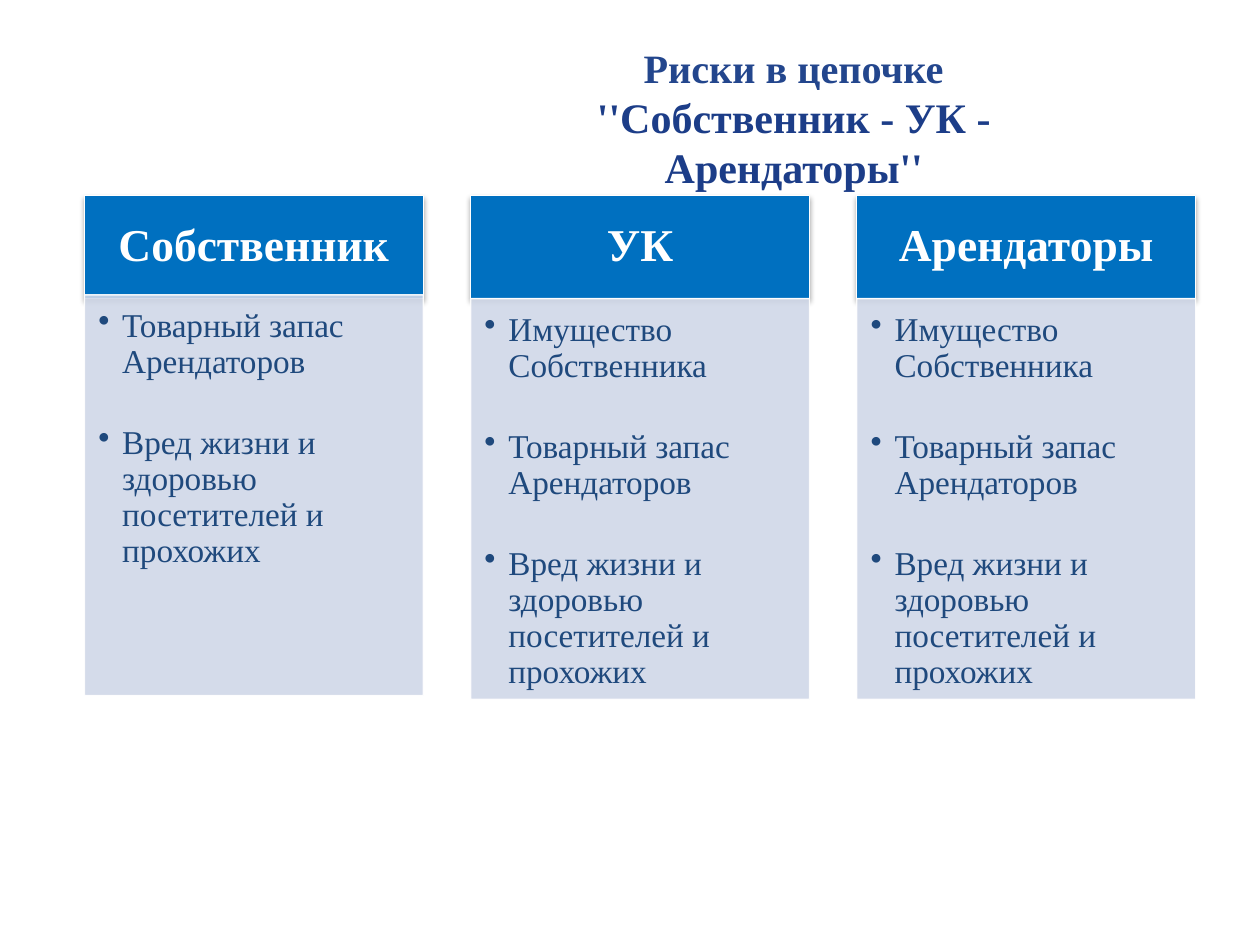
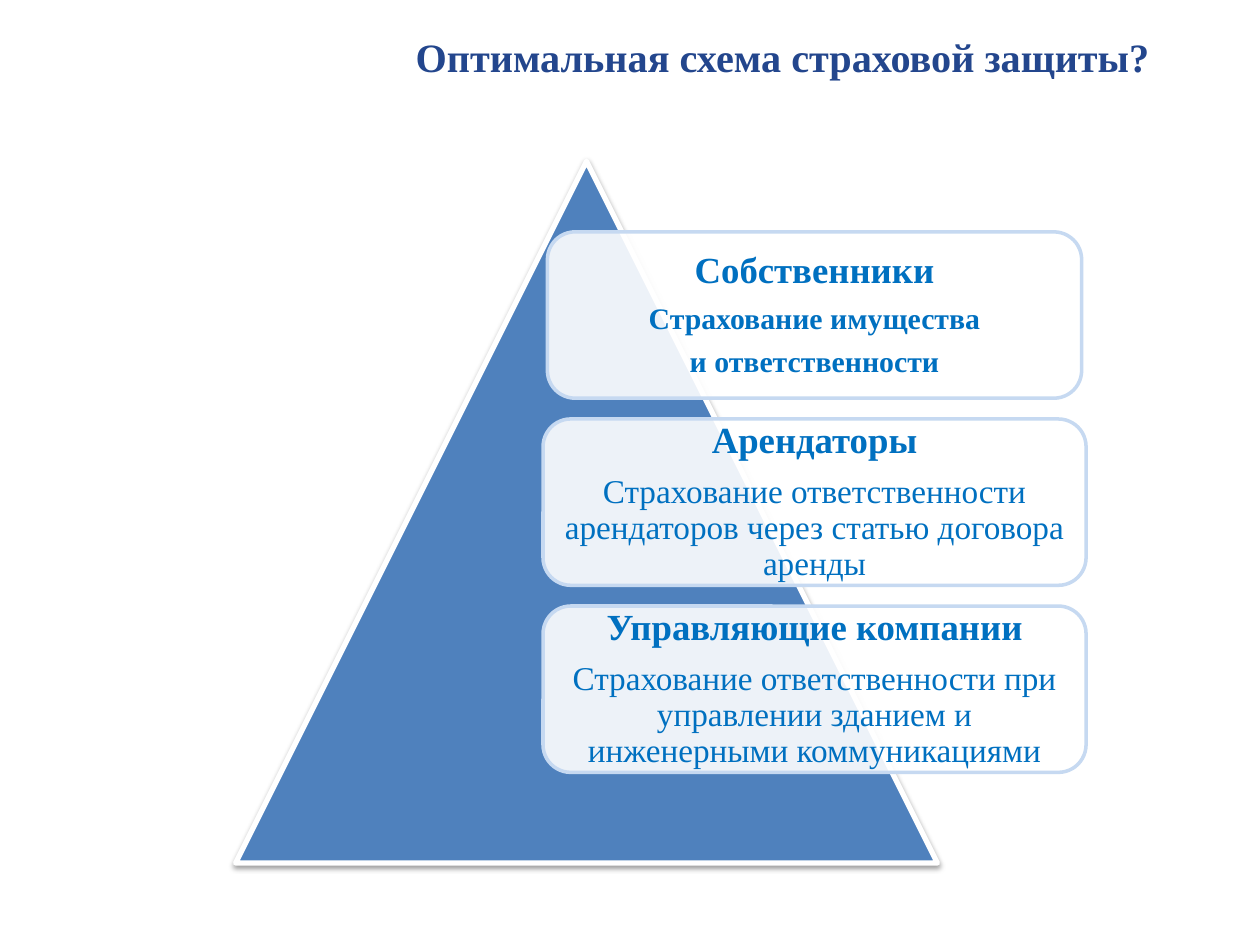
from lxml import etree
from pptx import Presentation
from pptx.dml.color import RGBColor
from pptx.enum.shapes import MSO_SHAPE
from pptx.enum.text import MSO_ANCHOR, MSO_AUTO_SIZE, PP_ALIGN
from pptx.oxml.ns import qn
from pptx.util import Inches, Pt

# Content
OWN = "Имущество Собственника"
STOCK = "Товарный запас Арендаторов"
HARM = "Вред жизни и здоровью посетителей и прохожих"

CHAIN = [("Риски в цепочке", 23, "title"),
         ("''Собственник - УК - Арендаторы''", 24, "deep")]
RISKS = [  # heading, bullets, top of the panel
    ("Собственник", [STOCK, HARM], 2.34),
    ("УК", [OWN, STOCK, HARM], 2.37),
    ("Арендаторы", [OWN, STOCK, HARM], 2.37),
]
SCHEME = [("Оптимальная схема страховой защиты?", 23, "title")]
COVER = [  # heading, lines, size, bold, box width, inset
    ("Собственники", ["Страхование имущества", "и ответственности"],
     17, True, 4.24, 0.07),
    ("Арендаторы",
     ["Страхование ответственности арендаторов через статью договора аренды"],
     19, False, 4.31, 0.09),
    ("Управляющие компании",
     ["Страхование ответственности при управлении зданием и "
      "инженерными коммуникациями"], 19, False, 4.31, 0.09),
]

# Shared style
FONT = "Times New Roman"
HUES = {"title": "23468D", "deep": "1C3D88", "head": "0070C0",
        "panel": "D0D8E8", "body": "1F497D", "peak": "4F81BD",
        "edge": "C6D9F1", "white": "FFFFFF", "black": "000000"}

# Grids, in inches
COL_X, COL_W, COL_STEP = 0.67, 2.69, 3.065
HEAD_Y, HEAD_H, PANEL_H = 1.55, 0.82, 3.18
PEAK_X, PEAK_Y, PEAK_SIZE = 1.87, 1.28, 5.57
BOX_MID, BOX_Y, BOX_H, BOX_STEP = 6.465, 1.84, 1.32, 1.485


def hue(name):
    return RGBColor.from_string(HUES[name])


def fade(fill, share):
    """Give a solid fill or line colour its opacity in percent."""
    color = fill.find(".//" + qn("a:srgbClr"))
    etree.SubElement(color, qn("a:alpha"), val=str(share * 1000))


def shade(shape, share, dist):
    """Drop a soft shadow straight down."""
    shape.shadow.inherit = False
    effects = shape._element.spPr.find(qn("a:effectLst"))
    outer = etree.SubElement(
        effects, qn("a:outerShdw"), blurRad=str(Pt(3.1)),
        dist=str(Pt(dist)), dir="5400000", rotWithShape="0")
    color = etree.SubElement(outer, qn("a:srgbClr"), val=HUES["black"])
    etree.SubElement(color, qn("a:alpha"), val=str(share * 1000))


def draw(slide, kind, place, fill, edge, width):
    shape = slide.shapes.add_shape(kind, *map(Inches, place))
    shape.shadow.inherit = False
    shape.fill.solid()
    shape.fill.fore_color.rgb = hue(fill)
    shape.line.color.rgb = hue(edge)
    shape.line.width = Pt(width)
    return shape


def write(shape, rows, pads, anchor, bold=True, align=PP_ALIGN.CENTER,
          lead=0.9, after=0.35, dots=False):
    """Rows are (text, size, colour) or (text, size, colour, bold)."""
    frame = shape.text_frame
    frame.word_wrap = True
    frame.auto_size = MSO_AUTO_SIZE.NONE
    frame.vertical_anchor = anchor
    (frame.margin_left, frame.margin_top,
     frame.margin_right, frame.margin_bottom) = map(Inches, pads)
    frame.text = "\n".join(row[0] for row in rows)
    for par, (_, size, color, *weight) in zip(frame.paragraphs, rows):
        par.alignment = align
        par.line_spacing = lead
        par.space_after = Pt(round(size * after, 1))
        if dots:
            props = par._p.get_or_add_pPr()
            props.set("marL", str(Inches(0.19)))
            props.set("indent", str(-Inches(0.19)))
            etree.SubElement(props, qn("a:buChar"), char="•")
        font = par.runs[0].font
        font.name, font.size = FONT, Pt(size)
        font.bold = weight[0] if weight else bold
        font.color.rgb = hue(color)


def start(deck, rows, place):
    """Add a slide with its title."""
    slide = deck.slides.add_slide(deck.slide_layouts[5])
    title = slide.shapes.title
    title.left, title.top, title.width, title.height = map(Inches, place)
    write(title, rows, (0.1, 0.05, 0.1, 0.05), MSO_ANCHOR.TOP,
          lead=1.0, after=0)
    return slide


def risks(deck):
    slide = start(deck, CHAIN, (4.55, 0.29, 3.5, 1.26))
    for col, (name, items, top) in enumerate(RISKS):
        left = COL_X + col * COL_STEP
        # Column heading
        head = draw(slide, MSO_SHAPE.RECTANGLE,
                    (left, HEAD_Y, COL_W, HEAD_H), "head", "white", 0.75)
        shade(head, 35, 1.8)
        write(head, [(name, 26, "white")], (0.2, 0.12, 0.2, 0.12),
              MSO_ANCHOR.MIDDLE)
        # Panel of risks
        panel = draw(slide, MSO_SHAPE.RECTANGLE,
                     (left, top, COL_W, PANEL_H), "panel", "white", 0.75)
        props = panel._element.spPr
        fade(props.find(qn("a:solidFill")), 90)
        fade(props.find(qn("a:ln")), 90)
        write(panel, [(item, 19, "body") for item in items],
              (0.11, 0.11, 0.15, 0.17), MSO_ANCHOR.TOP, bold=False,
              align=PP_ALIGN.LEFT, after=1.37, dots=True)


def scheme(deck):
    slide = start(deck, SCHEME, (2.87, 0.21, 6.69, 0.54))
    # Pyramid
    peak = draw(slide, MSO_SHAPE.ISOSCELES_TRIANGLE,
                (PEAK_X, PEAK_Y, PEAK_SIZE, PEAK_SIZE), "peak", "white", 3)
    shade(peak, 38, 1.6)
    # Cover boxes
    for row, (name, lines, size, bold, width, pad) in enumerate(COVER):
        place = (BOX_MID - width / 2, BOX_Y + row * BOX_STEP, width, BOX_H)
        box = draw(slide, MSO_SHAPE.ROUNDED_RECTANGLE, place,
                   "white", "edge", 2)
        fade(box._element.spPr.find(qn("a:solidFill")), 90)
        rows = [(name, 21, "head")]
        rows += [(line, size, "head", bold) for line in lines]
        write(box, rows, [pad] * 4, MSO_ANCHOR.MIDDLE)


def main():
    deck = Presentation()
    deck.slide_width, deck.slide_height = Inches(10), Inches(7.5)
    risks(deck)
    scheme(deck)
    deck.save("out.pptx")


if __name__ == "__main__":
    main()
